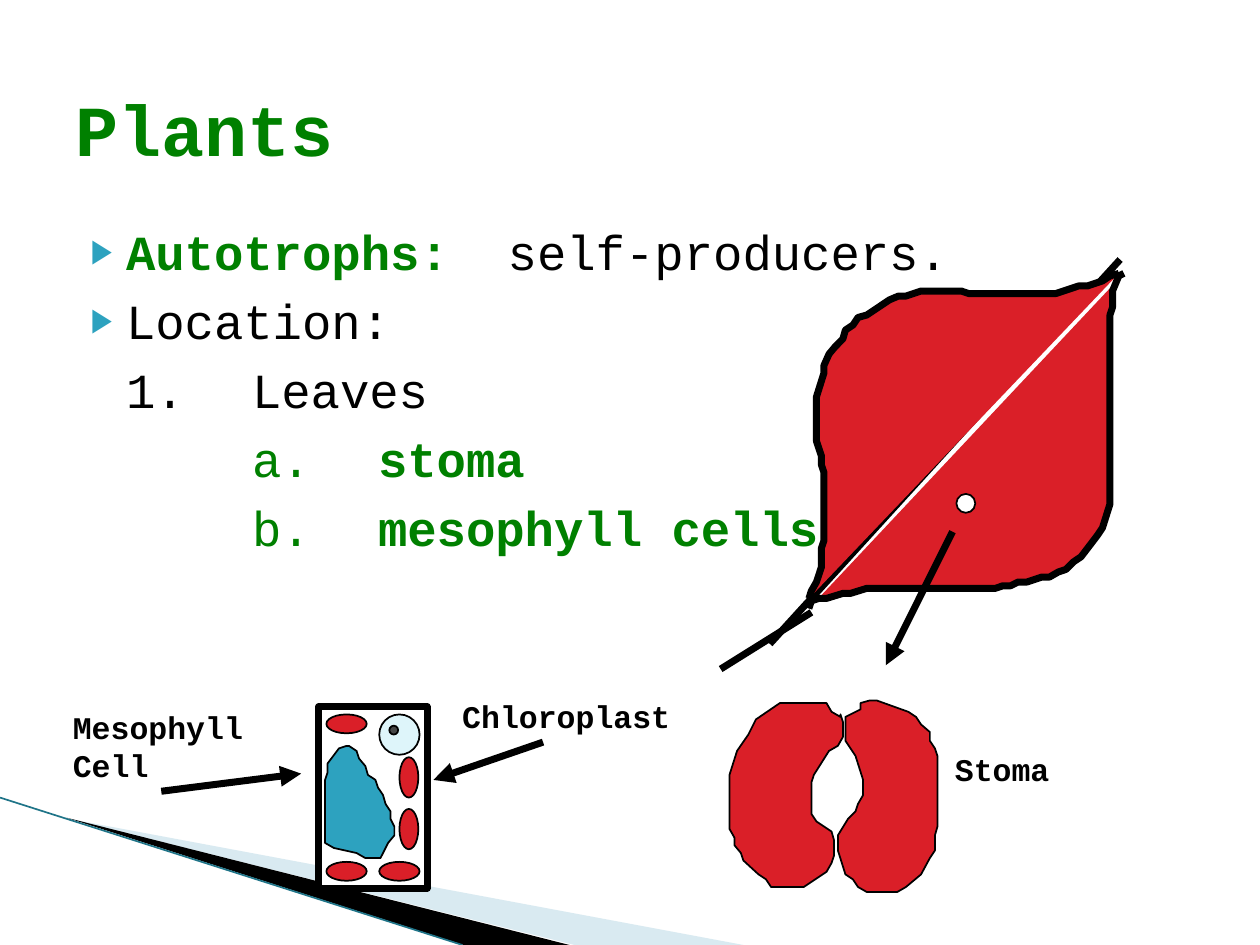
from lxml import etree
from pptx import Presentation
from pptx import util as u
from pptx.dml.color import RGBColor
from pptx.enum import shapes, text
from pptx.oxml import ns

BLACK = RGBColor(0x00, 0x00, 0x00)
WHITE = RGBColor(0xFF, 0xFF, 0xFF)
GREEN = RGBColor(0x00, 0x80, 0x00)
RED = RGBColor(0xDA, 0x1F, 0x28)
TEAL = RGBColor(0x2D, 0xA2, 0xBF)
DARK_TEAL = RGBColor(0x1F, 0x74, 0x88)
PALE_BLUE = RGBColor(0xA0, 0xCB, 0xDC)
NUCLEUS = RGBColor(0xDE, 0xF5, 0xFA)
GRAY = RGBColor(0x46, 0x46, 0x46)
FONT = "Courier New"
UNIT = u.Pt(0.72)
THIN, THICK = 1, 4

TITLE = "Plants"
TITLE_BOX = (50, 30, 900, 125)
BODY_BOX = (50, 162, 900, 495)
BODY = [
    (0, [("Autotrophs:", GREEN, True), ("  self-producers.", BLACK, False)]),
    (0, [("Location:", BLACK, False)]),
    (1, [("1.\tLeaves", BLACK, False)]),
    (2, [("a.\t", GREEN, False), ("stoma", GREEN, True)]),
    (2, [("b.\t", GREEN, False), ("mesophyll cells", GREEN, True)]),
]
INDENTS = [(28.8, -20.16), (100.8, -72), (172.8, -72)]

PALE_WEDGE = [(55, 650), (590, 750), (456, 750)]
BLACK_WEDGE = [(53, 649), (452, 750), (368, 750)]

RIGHT_GUARD_CELL = [
    (683, 558), (690, 556), (696, 556), (721, 565), (727, 569), (731, 575), (738, 581),
    (738, 588), (742, 594), (744, 600), (744, 656), (742, 663), (742, 675), (738, 681),
    (731, 694), (719, 704), (712, 708), (688, 708), (681, 704), (677, 698), (671, 694),
    (665, 675), (665, 663), (673, 650), (679, 644), (681, 638), (685, 631), (685, 619),
    (679, 600), (671, 588), (671, 569), (683, 563)]
LEFT_GUARD_CELL = [
    (667, 567), (669, 573), (669, 585), (665, 592), (658, 596), (646, 615), (644, 621),
    (644, 646), (648, 652), (660, 660), (662, 667), (662, 679), (660, 685), (656, 692),
    (638, 704), (612, 704), (608, 698), (602, 694), (590, 683), (588, 677), (583, 671),
    (583, 665), (579, 658), (579, 615), (585, 596), (594, 583), (600, 571), (619, 558),
    (656, 558), (660, 565), (667, 569)]
VACUOLE = [
    (275, 592), (269, 594), (260, 606), (260, 613), (258, 619), (258, 669), (265, 673),
    (283, 677), (290, 681), (302, 681), (308, 669), (313, 663), (313, 656), (310, 650),
    (310, 644), (306, 638), (304, 631), (300, 625), (298, 619), (292, 615), (290, 608),
    (285, 602), (283, 596), (277, 592)]
UPPER_LEAF = [
    (642, 475), (644, 469), (648, 462), (652, 450), (652, 435), (654, 429), (654, 375),
    (652, 369), (652, 362), (648, 350), (648, 315), (654, 296), (654, 290), (658, 281),
    (663, 275), (669, 269), (671, 262), (677, 258), (681, 252), (688, 250), (706, 238),
    (713, 235), (719, 235), (731, 231), (763, 231), (769, 233), (838, 233), (856, 227),
    (863, 227), (875, 223), (881, 219), (888, 217)]
LOWER_LEAF = [
    (642, 483), (644, 477), (650, 475), (656, 475), (669, 471), (675, 471), (688, 467),
    (790, 467), (796, 465), (802, 465), (808, 462), (815, 462), (827, 458), (833, 458),
    (840, 454), (846, 452), (852, 446), (858, 442), (871, 425), (875, 419), (881, 400),
    (881, 250), (883, 244), (883, 231), (888, 219), (892, 217)]

FLAT, TALL = (32, 15), (15, 32)
CHLOROPLASTS = [((259, 567), FLAT), ((317, 601), TALL), ((317, 642), TALL),
                ((259, 684), FLAT), ((301, 684), FLAT)]

STOMA = [
    ("outline", RIGHT_GUARD_CELL, RED, THIN, True),
    ("outline", LEFT_GUARD_CELL, RED, THIN, True),
    ("label", (748, 590, 122, 50), "Stoma"),
]
MESOPHYLL = [
    ("preset", "RECTANGLE", (253, 561, 86, 144), WHITE, THICK),
    *[("preset", "OVAL", corner + size, RED, THIN) for corner, size in CHLOROPLASTS],
    ("outline", VACUOLE, TEAL, THIN, True),
    ("preset", "OVAL", (301, 567, 32, 32), NUCLEUS, THIN),
    ("preset", "OVAL", (309, 576, 7, 7), GRAY, THIN),
    ("label", (48, 557, 183, 90), "Mesophyll\nCell"),
    ("line", (128, 628, 239, 614), BLACK, THICK, True),
    ("label", (357, 548, 205, 50), "Chloroplast"),
    ("line", (431, 589, 344, 619), BLACK, THICK, True),
]
LEAF = [
    ("line", (611, 511, 889, 206), BLACK, THICK, False),
    ("outline", UPPER_LEAF, RED, THICK, False),
    ("outline", LOWER_LEAF, RED, THICK, False),
    ("line", (644, 486, 572, 531), BLACK, THICK, False),
    ("preset", "OVAL", (759, 392, 15, 15), WHITE, THIN),
    ("line", (756, 422, 703, 528), BLACK, THICK, True),
]


def scaled(values):
    return [UNIT * value for value in values]


def set_values(target, **values):
    for name, value in values.items():
        setattr(target, name, value)


def add_xml(parent, tag, **attributes):
    element = etree.SubElement(parent, ns.qn(tag))
    for name, value in attributes.items():
        element.set(name, value)
    return element


def set_font(font, size, color, bold):
    set_values(font, name=FONT, size=u.Pt(size), bold=bold)
    font.color.rgb = color


def paint(shape, fill, width):
    shape.shadow.inherit = False
    shape.fill.solid()
    shape.fill.fore_color.rgb = fill
    if width:
        shape.line.color.rgb = BLACK
        shape.line.width = u.Pt(width)
    else:
        shape.line.fill.background()


def add_preset(parent, kind, box, fill, width):
    paint(parent.add_shape(shapes.MSO_SHAPE[kind], *scaled(box)), fill, width)


def add_outline(parent, points, fill, width, closed):
    builder = parent.build_freeform(*points[0], scale=UNIT)
    builder.add_line_segments(points[1:], close=closed)
    shape = builder.convert_to_shape()
    paint(shape, fill, width)
    return shape


def add_line(parent, ends, color, width, arrow):
    line = parent.add_connector(shapes.MSO_CONNECTOR.STRAIGHT, *scaled(ends))
    line.line.color.rgb = color
    line.line.width = u.Pt(width)
    properties = line._element.spPr
    add_xml(properties, "a:effectLst")
    if arrow:
        add_xml(properties.find(ns.qn("a:ln")), "a:tailEnd", type="triangle")


def add_label(parent, box, words):
    frame = parent.add_textbox(*scaled(box)).text_frame
    frame.word_wrap = False
    frame.text = words
    for paragraph in frame.paragraphs:
        set_font(paragraph.runs[0].font, 18, BLACK, True)


def fill_placeholder(shape, box, anchor, top):
    set_values(shape, **dict(zip(("left", "top", "width", "height"), scaled(box))))
    set_values(shape.text_frame, auto_size=text.MSO_AUTO_SIZE.NONE, word_wrap=True,
               vertical_anchor=anchor, margin_top=u.Pt(top))
    return shape.text_frame


def add_title(shape):
    frame = fill_placeholder(shape, TITLE_BOX, text.MSO_ANCHOR.MIDDLE, 16)
    frame.text = TITLE
    frame.paragraphs[0].alignment = text.PP_ALIGN.LEFT
    set_font(frame.paragraphs[0].runs[0].font, 41, GREEN, True)


def add_body(shape):
    frame = fill_placeholder(shape, BODY_BOX, text.MSO_ANCHOR.TOP, 10)
    for index, (level, runs) in enumerate(BODY):
        paragraph = frame.add_paragraph() if index else frame.paragraphs[0]
        paragraph.space_before = u.Pt(5.8 if index else 0)
        properties = paragraph._p.get_or_add_pPr()
        for name, value in zip(("marL", "indent"), INDENTS[level]):
            properties.set(name, str(int(u.Pt(value))))
        if level:
            add_xml(properties, "a:buNone")
        else:
            add_xml(add_xml(properties, "a:buClr"), "a:srgbClr", val=str(TEAL))
            add_xml(properties, "a:buSzPct", val="68000")
            add_xml(properties, "a:buChar", char="▶")
        for words, color, bold in runs:
            run = paragraph.add_run()
            run.text = words
            set_font(run.font, 28, color, bold)


def main():
    presentation = Presentation()
    set_values(presentation, slide_width=u.Pt(720), slide_height=u.Pt(540))
    slide = presentation.slides.add_slide(presentation.slide_layouts[1])
    add_title(slide.shapes.title)
    add_body(slide.placeholders[1])

    wedge = add_outline(slide.shapes, PALE_WEDGE, PALE_BLUE, 0, True)
    color = wedge._element.spPr.find(ns.qn("a:solidFill"))[0]
    add_xml(color, "a:alpha", val="40000")
    add_outline(slide.shapes, BLACK_WEDGE, BLACK, 0, True)
    add_line(slide.shapes, (0, 633, 367, 750), DARK_TEAL, 0.95, False)

    makers = {"preset": add_preset, "outline": add_outline,
              "line": add_line, "label": add_label}
    for drawing in (STOMA, MESOPHYLL, LEAF):
        group = slide.shapes.add_group_shape()
        for kind, *details in drawing:
            makers[kind](group.shapes, *details)
    presentation.save("out.pptx")


if __name__ == "__main__":
    main()
